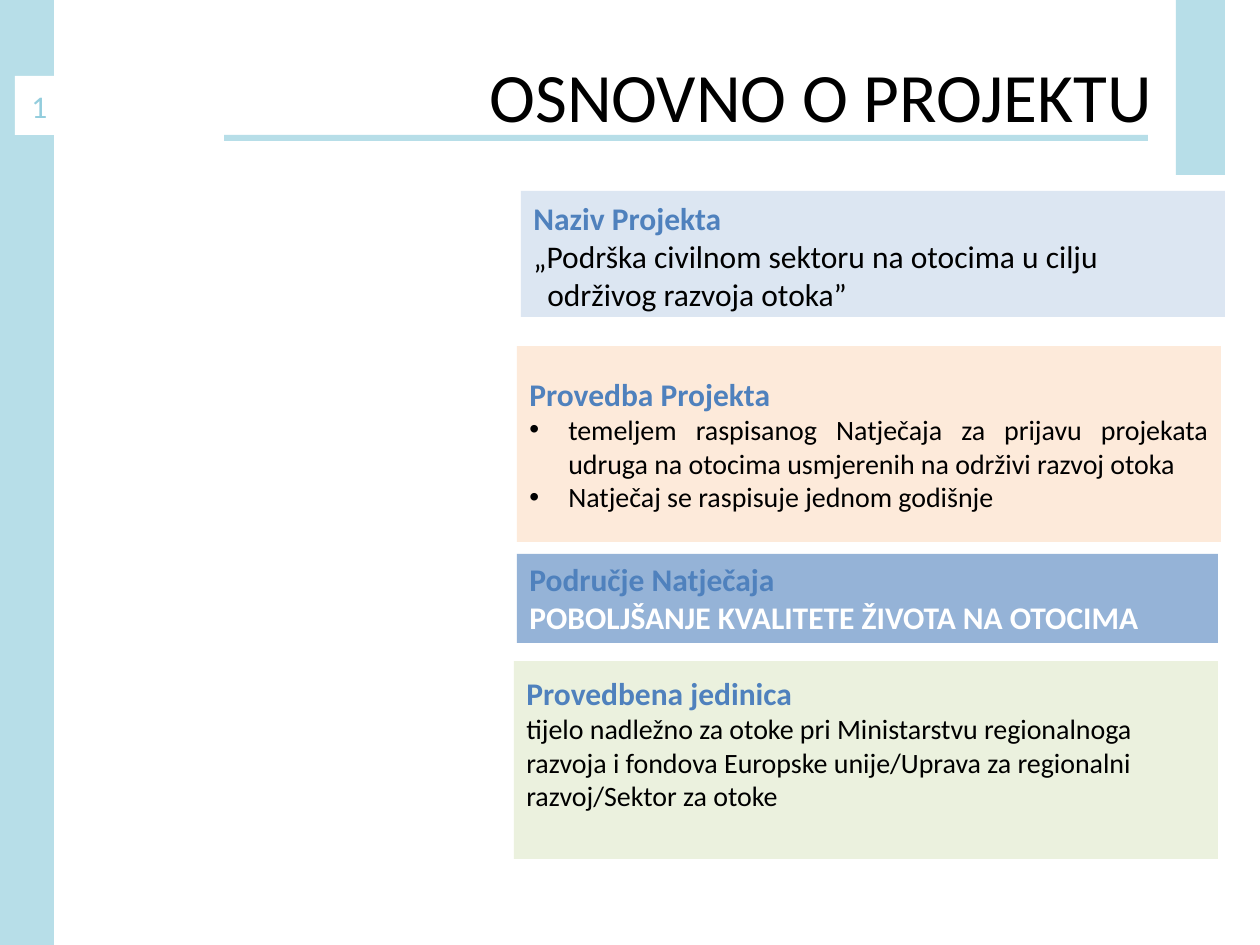
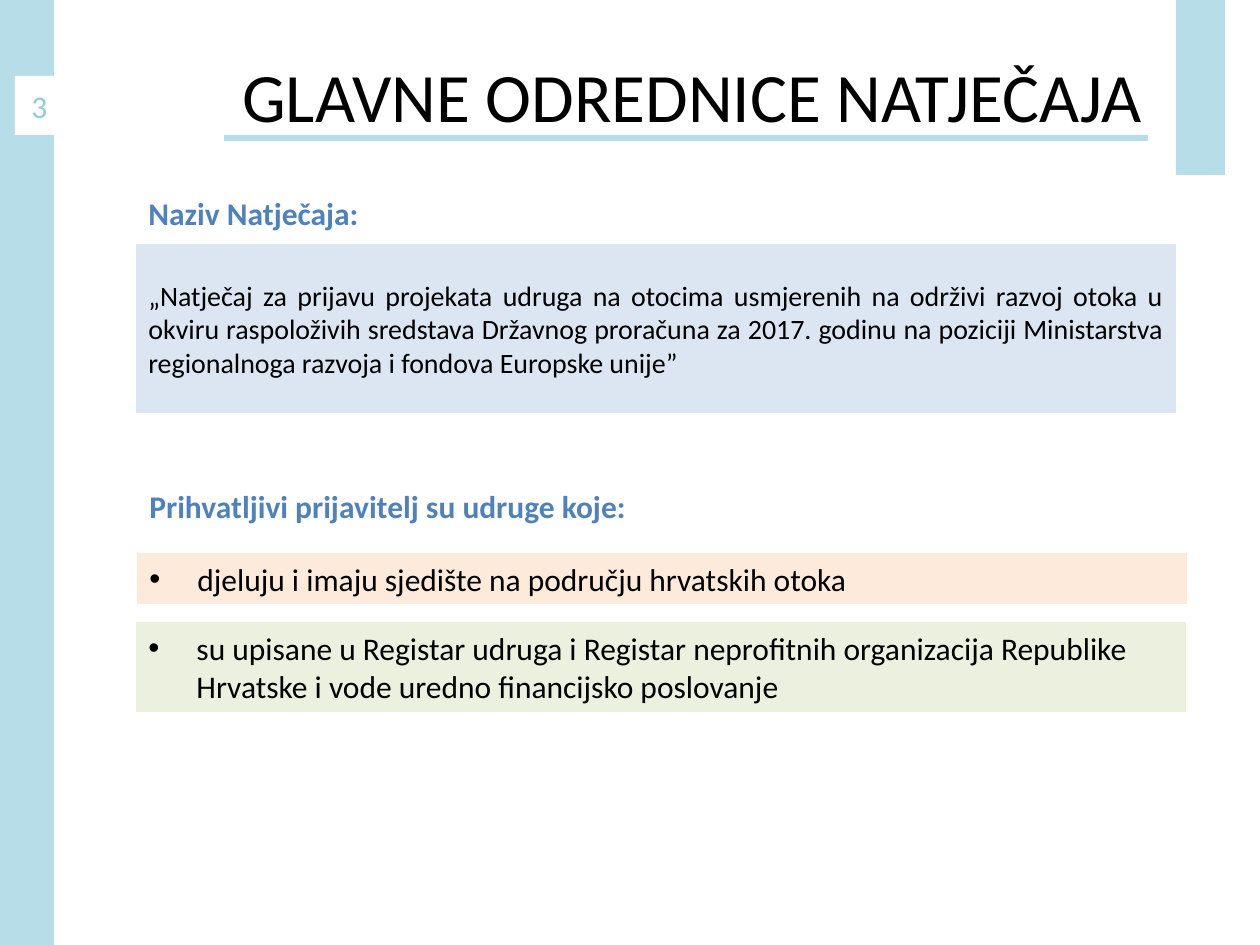
from dataclasses import dataclass
from lxml import etree
from pptx import Presentation, util as u
from pptx.dml.color import RGBColor
from pptx.enum import shapes, text
from pptx.oxml.ns import qn

LEFT, RIGHT, FULL, MID = (text.PP_ALIGN.LEFT, text.PP_ALIGN.RIGHT,
                          text.PP_ALIGN.JUSTIFY, text.PP_ALIGN.CENTER)


@dataclass(frozen=True)
class Theme:
    font: str = "Calibri"
    band: str = "B7DEE8"
    page: str = "93CDDD"
    head: str = "4F81BD"
    ink: str = "000000"
    white: str = "FFFFFF"
    blue: str = "DCE6F2"
    peach: str = "FDEADA"
    green: str = "EBF1DE"
    steel: str = "95B3D7"
    title: float = 39.6
    large: int = 18
    small: int = 16


def px(n):
    return u.Emu(round(n * 914400 / 126))


class Deck:
    def __init__(self, theme):
        self.theme = theme
        self.prs = Presentation()
        self.prs.slide_width, self.prs.slide_height = px(1260), px(945)
        self.slide = None

    def rect(self, box, fill):
        shape = self.slide.shapes.add_shape(shapes.MSO_SHAPE.RECTANGLE, *map(px, box))
        shape.shadow.inherit = False
        shape.fill.solid()
        shape.fill.fore_color.rgb = RGBColor.from_string(fill)
        shape.line.fill.background()
        return shape

    def put(self, shape, paras, top=None, right=None):
        frame = shape.text_frame
        frame.word_wrap = True
        frame.vertical_anchor = (text.MSO_ANCHOR.MIDDLE if top is None
                                 else text.MSO_ANCHOR.TOP)
        if top is not None:
            frame.margin_top = px(top)
        if right is not None:
            frame.margin_right = px(right)
        for i, para in enumerate(paras):
            p = frame.add_paragraph() if i else frame.paragraphs[0]
            self.fill(p, **para)

    def fill(self, p, words, size=None, color=None, bold=False,
             align=LEFT, indent=0, bullet=False):
        p.alignment = align
        props = p._p.get_or_add_pPr()
        if indent:
            props.set("marL", str(px(indent)))
            props.set("indent", str(px(-indent) if bullet else 0))
        if bullet:
            etree.SubElement(props, qn("a:buFont")).set("typeface", "Arial")
            etree.SubElement(props, qn("a:buChar")).set("char", "•")
        run = p.add_run()
        run.text = words
        font = run.font
        font.name, font.bold = self.theme.font, bold
        font.size = u.Pt(size or self.theme.large)
        font.color.rgb = RGBColor.from_string(color or self.theme.ink)

    def head(self, words):
        return dict(words=words, color=self.theme.head, bold=True)

    def panel(self, box, fill, paras, top=None):
        self.put(self.rect(box, fill), paras, top)

    def label(self, box, paras, right=None):
        self.put(self.slide.shapes.add_textbox(*map(px, box)), paras, right=right)

    def start(self, title, page, right):
        t = self.theme
        self.slide = self.prs.slides.add_slide(self.prs.slide_layouts[6])
        self.label((64, 16, 1134, 158),
                   [dict(words=title, size=t.title, align=RIGHT)], right)
        self.rect((0, 0, 54, 945), t.band)
        self.panel((15, 76, 49, 59), t.white,
                   [dict(words=page, color=t.page, align=MID)])
        self.rect((224, 135, 924, 6), t.band)
        self.rect((1176, 0, 49, 175), t.band)


def project(d):
    t = d.theme
    d.start("OSNOVNO O PROJEKTU", "1", 46)
    d.panel((521, 191, 704, 126), t.blue, [
        d.head("Naziv Projekta"),
        dict(words="„Podrška civilnom sektoru na otocima u cilju"),
        dict(words="održivog razvoja otoka”", indent=14)], top=8)
    item = dict(size=t.small, align=FULL, indent=39, bullet=True)
    d.panel((517, 346, 704, 196), t.peach, [
        d.head("Provedba Projekta"),
        dict(words="temeljem raspisanog Natječaja za prijavu projekata udruga "
                   "na otocima usmjerenih na održivi razvoj otoka", **item),
        dict(words="Natječaj se raspisuje jednom godišnje", **item)])
    d.panel((517, 554, 701, 89), t.steel, [
        d.head("Područje Natječaja"),
        dict(words="POBOLJŠANJE KVALITETE ŽIVOTA NA OTOCIMA",
             color=t.white, bold=True)], top=6)
    d.panel((514, 661, 704, 198), t.green, [
        d.head("Provedbena jedinica"),
        dict(words="tijelo nadležno za otoke pri Ministarstvu regionalnoga "
                   "razvoja i fondova Europske unije/Uprava za regionalni "
                   "razvoj/Sektor za otoke", size=t.small)], top=13)


def tender(d):
    t = d.theme
    d.start("GLAVNE ODREDNICE NATJEČAJA", "3", 56)
    d.label((136, 187, 245, 51), [d.head("Naziv Natječaja:")])
    d.panel((136, 244, 1040, 169), t.blue, [
        dict(words="„Natječaj za prijavu projekata udruga na otocima usmjerenih "
                   "na održivi razvoj otoka u okviru raspoloživih sredstava "
                   "Državnog proračuna za 2017. godinu na poziciji Ministarstva "
                   "regionalnoga razvoja i fondova Europske unije”",
             size=t.small, align=FULL)])
    d.label((137, 480, 507, 51), [d.head("Prihvatljivi prijavitelj su udruge koje:")])
    item = dict(indent=48, bullet=True)
    d.panel((137, 553, 1050, 51), t.peach, [
        dict(words="djeluju i imaju sjedište na području hrvatskih otoka", **item)])
    d.panel((136, 622, 1050, 90), t.green, [
        dict(words="su upisane u Registar udruga i Registar neprofitnih organizacija "
                   "Republike Hrvatske i vode uredno financijsko poslovanje", **item)])


def main():
    deck = Deck(Theme())
    project(deck)
    tender(deck)
    deck.prs.save("out.pptx")


if __name__ == "__main__":
    main()
